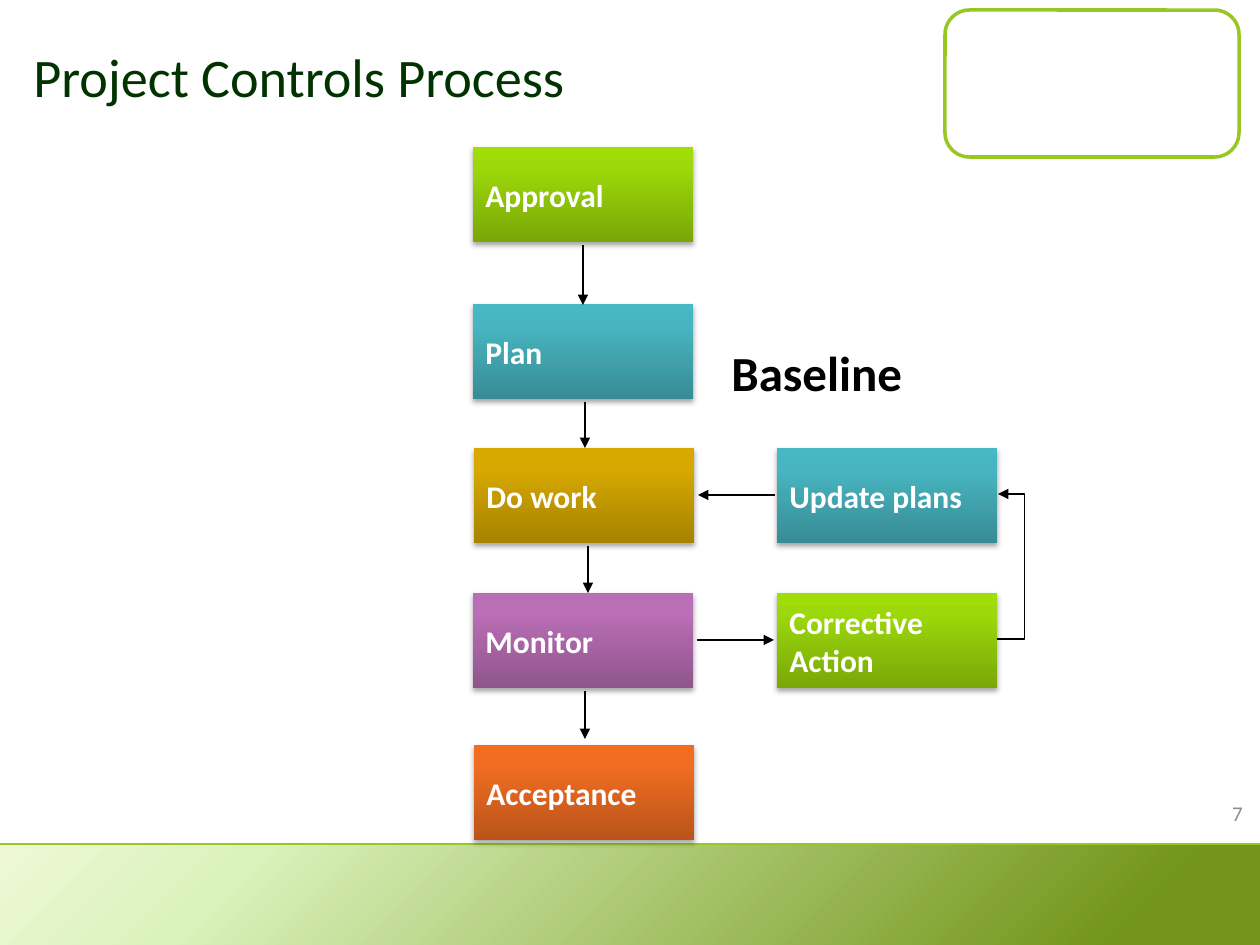
from typing import NamedTuple

from lxml.etree import SubElement
from pptx import Presentation
from pptx.dml.color import RGBColor as Rgb
from pptx.enum.shapes import MSO_CONNECTOR as Conn, MSO_SHAPE as Kind
from pptx.enum.text import MSO_ANCHOR as Anchor, PP_ALIGN as Align
from pptx.oxml import parse_xml
from pptx.oxml.ns import nsdecls, qn
from pptx.util import Emu, Pt

SCALE = 914400 / 126  # EMU in one px

INK = {
    "white": "FFFFFF", "black": "000000", "title": "003300",
    "edge": "98C723", "page": "8C8C8C",
}
# Gradient stops: percent and colour
BLEND = {
    "green": [(0, "79A708"), (80, "9DD90A"), (100, "A0DE06")],
    "teal": [(0, "388C95"), (80, "48B6C1"), (100, "46B9C4")],
    "gold": [(0, "A68200"), (80, "D7A900"), (100, "D8A900")],
    "plum": [(0, "8F558C"), (80, "BA6EB6"), (100, "BC6EB8")],
    "rust": [(0, "BA541A"), (80, "F16D22"), (100, "F66C1E")],
    "foot": [(0, "EEF8D5"), (19, "DAF2BC"), (89, "72951A")],
}
BOX_W, BOX_H = 220, 95


class Area(NamedTuple):
    x: int
    y: int
    w: int
    h: int


class Step(NamedTuple):
    text: str
    x: int
    y: int
    blend: str


class Arrow(NamedTuple):
    x1: int
    y1: int
    x2: int
    y2: int


class Label(NamedTuple):
    text: str
    area: Area
    ink: str
    font: dict
    frame: dict
    align: Align = Align.LEFT


STEPS = [
    Step("Approval", 473, 147, "green"),
    Step("Plan", 473, 304, "teal"),
    Step("Do work", 474, 448, "gold"),
    Step("Monitor", 473, 593, "plum"),
    Step("Acceptance", 474, 745, "rust"),
    Step("Update plans", 777, 448, "teal"),
    Step("Corrective Action", 777, 593, "green"),
]
ARROWS = [
    Arrow(583, 245, 583, 305),
    Arrow(585, 402, 585, 448),
    Arrow(588, 546, 588, 593),
    Arrow(585, 691, 585, 739),
    Arrow(697, 640, 774, 640),
    Arrow(775, 495, 698, 495),
]
LABELS = [
    Label("Project Controls Process", Area(21, 0, 1019, 152), "title",
          {"size": Pt(31)}, {"word_wrap": True, "vertical_anchor": Anchor.MIDDLE}),
    Label("Baseline", Area(719, 336, 198, 72), "black",
          {"size": Pt(28), "bold": True}, {"word_wrap": False}),
    Label("7", Area(961, 788, 294, 50), "page", {"size": Pt(12)},
          {"word_wrap": True, "vertical_anchor": Anchor.MIDDLE}, Align.RIGHT),
]


def px(*nums: int) -> list[Emu]:
    return [Emu(round(n * SCALE)) for n in nums]


def shade(shape, blend: str, angle: int) -> None:
    """Fill a shape with a linear gradient."""
    stops = "".join(
        f'<a:gs pos="{pos * 1000}"><a:srgbClr val="{tint}"/></a:gs>'
        for pos, tint in BLEND[blend])
    fill = parse_xml(
        f'<a:gradFill {nsdecls("a")} rotWithShape="1"><a:gsLst>{stops}</a:gsLst>'
        f'<a:lin ang="{angle * 60000}" scaled="0"/></a:gradFill>')
    shape._element.spPr.find(qn("a:prstGeom")).addnext(fill)


def cast(shape) -> None:
    """Give a shape a soft shadow below it."""
    shape._element.spPr.find(qn("a:effectLst")).append(parse_xml(
        f'<a:outerShdw {nsdecls("a")} blurRad="{Pt(3.1)}" dist="{Pt(1.8)}" '
        f'dir="5400000" rotWithShape="0"><a:srgbClr val="{INK["black"]}">'
        f'<a:alpha val="35000"/></a:srgbClr></a:outerShdw>'))


def write(shape, text: str, ink: str, font: dict, frame: dict, align: Align) -> None:
    body = shape.text_frame
    for key, val in frame.items():
        setattr(body, key, val)
    para = body.paragraphs[0]
    para.alignment = align
    run = para.add_run()
    run.text = text
    for key, val in {"name": "Calibri", **font}.items():
        setattr(run.font, key, val)
    run.font.color.rgb = Rgb.from_string(INK[ink])


def block(slide, kind: Kind, area: Area):
    shape = slide.shapes.add_shape(kind, *px(*area))
    shape.shadow.inherit = False
    shape.line.fill.background()
    return shape


def step(slide, item: Step) -> None:
    shape = block(slide, Kind.RECTANGLE, Area(item.x, item.y, BOX_W, BOX_H))
    shade(shape, item.blend, 270)
    cast(shape)
    write(shape, item.text, "white", {"size": Pt(18), "bold": True},
          {"word_wrap": True, "vertical_anchor": Anchor.MIDDLE}, Align.LEFT)


def label(slide, item: Label) -> None:
    shape = slide.shapes.add_textbox(*px(*item.area))
    write(shape, item.text, item.ink, item.font, item.frame, item.align)


def link(slide, item: Arrow, ink: str = "black", width: float = 1,
         kind: Conn = Conn.STRAIGHT, head: bool = True):
    line = slide.shapes.add_connector(kind, *px(*item))
    line.line.color.rgb = Rgb.from_string(INK[ink])
    line.line.width = Pt(width)
    if head:
        SubElement(line.line._get_or_add_ln(), qn("a:tailEnd"), type="triangle")
    SubElement(line._element.spPr, qn("a:effectLst"))
    return line


def main() -> None:
    deck = Presentation()
    deck.slide_width, deck.slide_height = px(1260, 945)
    slide = deck.slides.add_slide(deck.slide_layouts[6])

    # Corner frame and footer band
    frame = block(slide, Kind.ROUNDED_RECTANGLE, Area(945, 10, 294, 147))
    frame.fill.solid()
    frame.fill.fore_color.rgb = Rgb.from_string(INK["white"])
    frame.line.color.rgb = Rgb.from_string(INK["edge"])
    frame.line.width = Pt(2)
    shade(block(slide, Kind.RECTANGLE, Area(0, 845, 1260, 103)), "foot", 45)
    link(slide, Arrow(0, 844, 1260, 844), "edge", 1.5, head=False)

    # Process steps and arrows
    for item in STEPS:
        step(slide, item)
    for item in ARROWS:
        link(slide, item)

    # Return loop: the bend lies 28 times the 1 px width to the right
    loop = link(slide, Arrow(997, 639, 998, 494), width=0.75, kind=Conn.ELBOW)
    geom = loop._element.spPr.find(qn("a:prstGeom"))
    SubElement(geom.get_or_add_avLst(), qn("a:gd"), name="adj1", fmla="val 2800000")

    # Title, baseline note and page number
    for item in LABELS:
        label(slide, item)

    deck.save("out.pptx")


if __name__ == "__main__":
    main()
